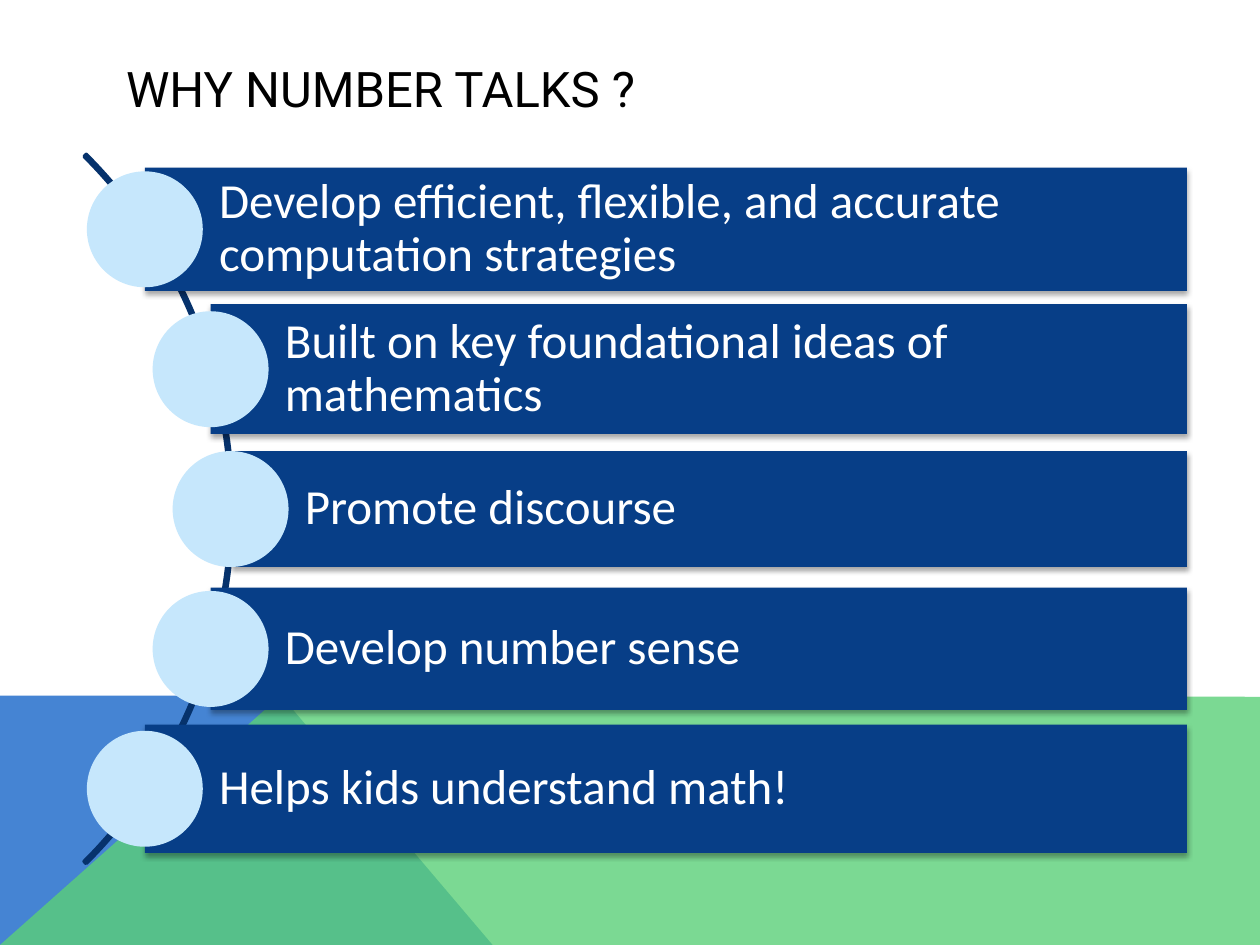
"""Build the slide on the reasons for number talks."""
import math

import lxml.etree
import pptx
import pptx.dml.color
import pptx.enum.shapes
import pptx.enum.text
import pptx.oxml
import pptx.oxml.ns
import pptx.util

Inches = pptx.util.Inches
Pt = pptx.util.Pt
SHAPES = pptx.enum.shapes.MSO_SHAPE
MIDDLE = pptx.enum.text.MSO_ANCHOR.MIDDLE
LEFT = pptx.enum.text.PP_ALIGN.LEFT


def color(value):
    return pptx.dml.color.RGBColor.from_string(value)


class ReasonsSlide:
    navy, arc_navy, pale, white, black = "073E87", "06326C", "C6E7FC", "FFFFFF", "000000"
    title_font, body_font, size = "Roboto", "Calibri", 28

    def __init__(self, deck):
        self.slide = deck.slides.add_slide(deck.slide_layouts[5])
        self.slide.background.fill.solid()
        self.slide.background.fill.fore_color.rgb = color(self.white)

    def paint(self, shape, fill):
        shape.shadow.inherit = False
        shape.fill.solid()
        shape.fill.fore_color.rgb = color(fill)
        shape.line.fill.background()

    def add_words(self, frame, words, font, ink):
        frame.vertical_anchor = MIDDLE
        paragraph = frame.paragraphs[0]
        paragraph.alignment = LEFT
        run = paragraph.add_run()
        run.text = words
        run.font.size = Pt(self.size)
        run.font.name = font
        run.font.color.rgb = color(ink)
        return paragraph

    def title(self, words, left, top, width, height):
        heading = self.slide.shapes.title
        heading.left, heading.top = Inches(left), Inches(top)
        heading.width, heading.height = Inches(width), Inches(height)
        self.add_words(heading.text_frame, words, self.title_font, self.black)

    def polygon(self, corners, fill, opacity=100):
        points = [(Inches(x), Inches(y)) for x, y in corners]
        builder = self.slide.shapes.build_freeform(*points[0])
        builder.add_line_segments(points[1:], close=True)
        band = builder.convert_to_shape()
        self.paint(band, fill)
        if opacity < 100:
            tint = band.element.spPr.find(".//" + pptx.oxml.ns.qn("a:srgbClr"))
            lxml.etree.SubElement(
                tint, pptx.oxml.ns.qn("a:alpha"), val=str(opacity * 1000))

    def preset(self, kind, left, top, width, height):
        return self.slide.shapes.add_shape(
            kind, Inches(left), Inches(top), Inches(width), Inches(height))

    def arc(self, center_x, center_y, radius):
        curve = self.preset(SHAPES.BLOCK_ARC, center_x - radius, center_y - radius,
                            2 * radius, 2 * radius)
        for index, value in enumerate((189, 27, 0.003)):
            curve.adjustments[index] = value
        curve.shadow.inherit = False
        curve.fill.background()
        curve.line.color.rgb = color(self.arc_navy)
        curve.line.width = Pt(2)

    def bar(self, words, left, top, width, height):
        reason = self.preset(SHAPES.RECTANGLE, left, top, width, height)
        self.paint(reason, self.navy)
        effects = reason.element.spPr.find(pptx.oxml.ns.qn("a:effectLst"))
        effects.append(pptx.oxml.parse_xml(
            f'<a:outerShdw {pptx.oxml.ns.nsdecls("a")} blurRad="{Pt(3.1)}" '
            f'dist="{Pt(1.8)}" dir="5400000" rotWithShape="0">'
            f'<a:srgbClr val="{self.black}"><a:alpha val="35000"/></a:srgbClr>'
            '</a:outerShdw>'))
        frame = reason.text_frame
        frame.word_wrap = True
        frame.margin_left = Inches(0.59)
        frame.margin_top = frame.margin_right = frame.margin_bottom = Inches(0.08)
        self.add_words(frame, words, self.body_font, self.white).line_spacing = 0.9

    def dot(self, center_x, center_y, diameter):
        marker = self.preset(SHAPES.OVAL, center_x - diameter / 2,
                             center_y - diameter / 2, diameter, diameter)
        self.paint(marker, self.pale)


def main():
    deck = pptx.Presentation()
    deck.slide_width, deck.slide_height = Inches(10), Inches(7.5)
    page = ReasonsSlide(deck)

    page.polygon([(0, 7.5), (0, 5.52), (2.23, 5.52), (3.91, 7.5)], "4584D3")
    page.polygon([(0, 7.5), (2.23, 5.52), (10, 5.53), (10, 7.5)], "5BD078", opacity=80)
    page.title("WHY NUMBER TALKS ?", 0.9, 0.4, 8.22, 0.6)

    arc_x, arc_y = -2.13, 4.04
    page.arc(arc_x, arc_y, 3.98)

    reasons = [
        ("Develop efficient, flexible, and accurate computation strategies", 0.98),
        ("Built on key foundational ideas of mathematics", 1.03),
        ("Promote discourse", 0.92),
        ("Develop number sense", 0.97),
        ("Helps kids understand math!", 1.02),
    ]
    row_pitch, dot_orbit, bar_right = 1.11, 3.96, 9.42
    for row, (words, height) in enumerate(reasons):
        drop = (row - len(reasons) // 2) * row_pitch
        center_x = arc_x + math.sqrt(dot_orbit ** 2 - drop ** 2)
        center_y = arc_y + drop
        page.bar(words, center_x, center_y - height / 2, bar_right - center_x, height)
        page.dot(center_x, center_y, 0.92)

    deck.save("out.pptx")


if __name__ == "__main__":
    main()
